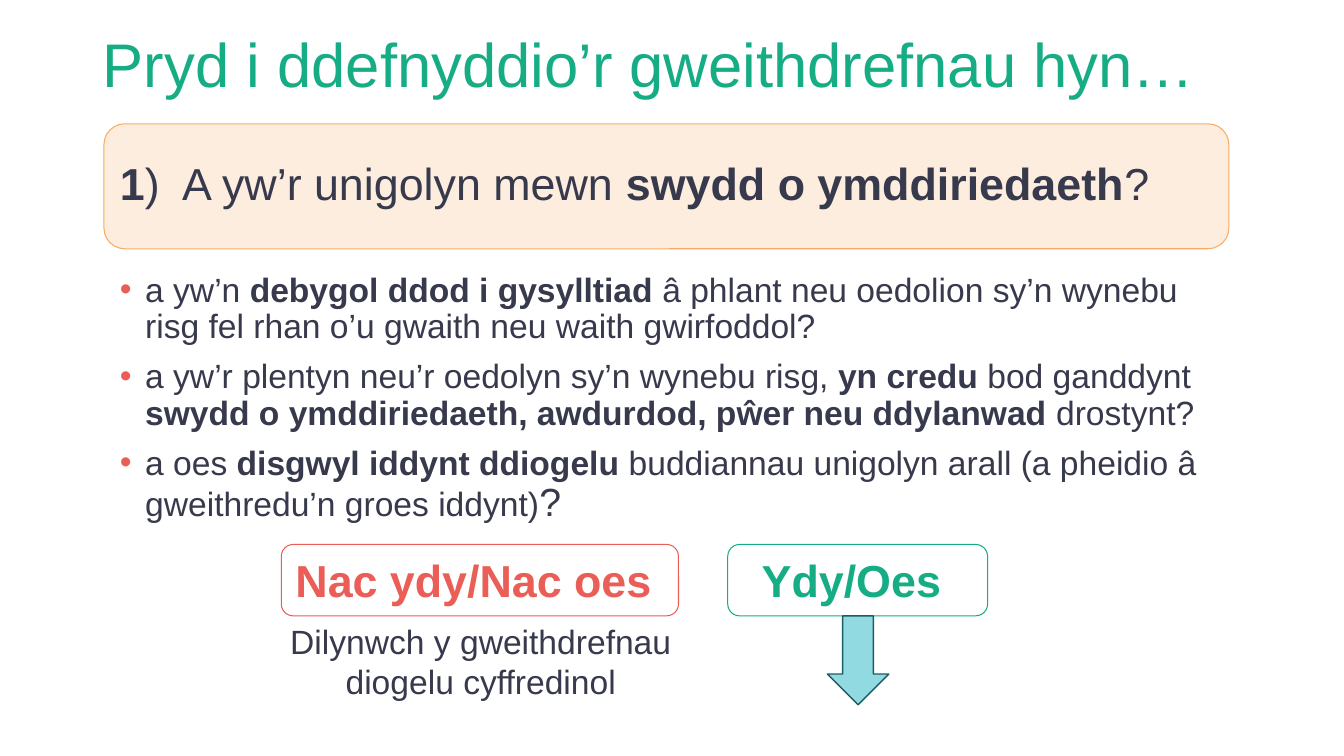
from lxml import etree
from pptx import Presentation
from pptx.dml.color import RGBColor
from pptx.enum import shapes, text
from pptx.oxml.ns import qn
from pptx.util import Cm, Pt

FONT = "Arial"
GREEN = RGBColor(0x16, 0xAD, 0x85)
RED = RGBColor(0xEB, 0x5E, 0x57)
INK = RGBColor(0x37, 0x39, 0x4C)
ORANGE = RGBColor(0xF7, 0xAB, 0x64)
PEACH = RGBColor(0xFD, 0xED, 0xDE)
AQUA = RGBColor(0x92, 0xDA, 0xE2)
TEAL = RGBColor(0x1B, 0x5D, 0x64)

LEFT, CENTER = text.PP_ALIGN.LEFT, text.PP_ALIGN.CENTER
TOP, MIDDLE = text.MSO_ANCHOR.TOP, text.MSO_ANCHOR.MIDDLE
ROUNDED = shapes.MSO_SHAPE.ROUNDED_RECTANGLE
ARROW = shapes.MSO_SHAPE.DOWN_ARROW

TITLE = "Pryd i ddefnyddio’r gweithdrefnau hyn…"
QUESTION = [("1", True), (")  A yw’r unigolyn mewn ", False),
            ("swydd o ymddiriedaeth", True), ("?", False)]
CRITERIA = [
    [("a yw’n ", False), ("debygol ddod i gysylltiad ", True),
     ("â phlant neu oedolion sy’n wynebu risg fel rhan o’u gwaith "
      "neu waith gwirfoddol?", False)],
    [("a yw’r plentyn neu’r oedolyn sy’n wynebu risg, ", False),
     ("yn credu ", True), ("bod ganddynt ", False),
     ("swydd o ymddiriedaeth, awdurdod, pŵer neu ddylanwad ", True),
     ("drostynt?", False)],
    [("a oes ", False), ("disgwyl iddynt ddiogelu ", True),
     ("buddiannau unigolyn arall (a pheidio â gweithredu’n groes iddynt)", False),
     ("?", False, 28)],
]


def set_frame(tf, anchor):
    tf.word_wrap = True
    tf.auto_size = text.MSO_AUTO_SIZE.NONE
    tf.vertical_anchor = anchor


def add_runs(p, runs, size, color, align=LEFT, spacing=None):
    """Fill p with (words, bold[, own size]) runs."""
    p.alignment = align
    p.line_spacing = spacing
    for words, bold, *own_size in runs:
        r = p.add_run()
        r.text = words
        r.font.name = FONT
        r.font.size = Pt(own_size[0] if own_size else size)
        r.font.bold = bold
        r.font.color.rgb = color


def add_bullet(p, color):
    pPr = p._p.get_or_add_pPr()
    pPr.set("marL", str(Cm(0.64)))
    pPr.set("indent", str(-Cm(0.64)))
    bu_clr = etree.SubElement(pPr, qn("a:buClr"))
    etree.SubElement(bu_clr, qn("a:srgbClr"), val=str(color))
    etree.SubElement(pPr, qn("a:buFont"), typeface=FONT)
    etree.SubElement(pPr, qn("a:buChar"), char="•")


def set_title(s):
    sp = s.shapes.title
    sp.left, sp.top, sp.width, sp.height = Cm(2.34), Cm(0.05), Cm(29.21), Cm(3.3)
    set_frame(sp.text_frame, MIDDLE)
    add_runs(sp.text_frame.paragraphs[0], [(TITLE, False)], 44, GREEN, spacing=0.9)


def add_figure(s, kind, box, line, fill=None, weight=0.75):
    sp = s.shapes.add_shape(kind, *map(Cm, box))
    sp.shadow.inherit = False
    if fill is None:
        sp.fill.background()
    else:
        sp.fill.solid()
        sp.fill.fore_color.rgb = fill
    sp.line.color.rgb = line
    sp.line.width = Pt(weight)
    return sp


def add_question(s):
    sp = add_figure(s, ROUNDED, (2.62, 3.12, 28.35, 3.15), ORANGE, PEACH)
    set_frame(sp.text_frame, MIDDLE)
    add_runs(sp.text_frame.paragraphs[0], QUESTION, 32, INK, spacing=0.9)


def add_text_box(s, box):
    tf = s.shapes.add_textbox(*map(Cm, box)).text_frame
    set_frame(tf, TOP)
    return tf


def add_criteria(s):
    tf = add_text_box(s, (2.77, 6.76, 27.66, 6.58))
    for i, runs in enumerate(CRITERIA):
        p = tf.add_paragraph() if i else tf.paragraphs[0]
        add_bullet(p, RED)
        if i:
            p.space_before = Pt(10)
        add_runs(p, runs, 24, INK, spacing=0.9)


def add_answer(s, left, width, words, color):
    sp = add_figure(s, ROUNDED, (left, 13.72, width, 1.8), color)
    set_frame(sp.text_frame, TOP)
    add_runs(sp.text_frame.paragraphs[0], [(words, True)], 32, color, CENTER)


def main():
    prs = Presentation()
    prs.slide_width, prs.slide_height = Cm(33.87), Cm(19.05)
    s = prs.slides.add_slide(prs.slide_layouts[5])
    set_title(s)
    add_question(s)
    add_criteria(s)
    advice = add_text_box(s, (6.78, 15.52, 10.67, 2.26))
    add_runs(advice.paragraphs[0],
             [("Dilynwch y gweithdrefnau diogelu cyffredinol", False)],
             24, INK, CENTER)
    add_answer(s, 7.09, 10.01, "Nac ydy/Nac oes ", RED)
    add_answer(s, 18.34, 6.55, "Ydy/Oes ", GREEN)
    add_figure(s, ARROW, (20.85, 15.52, 1.55, 2.24), TEAL, AQUA, 1)
    prs.save("out.pptx")


if __name__ == "__main__":
    main()
